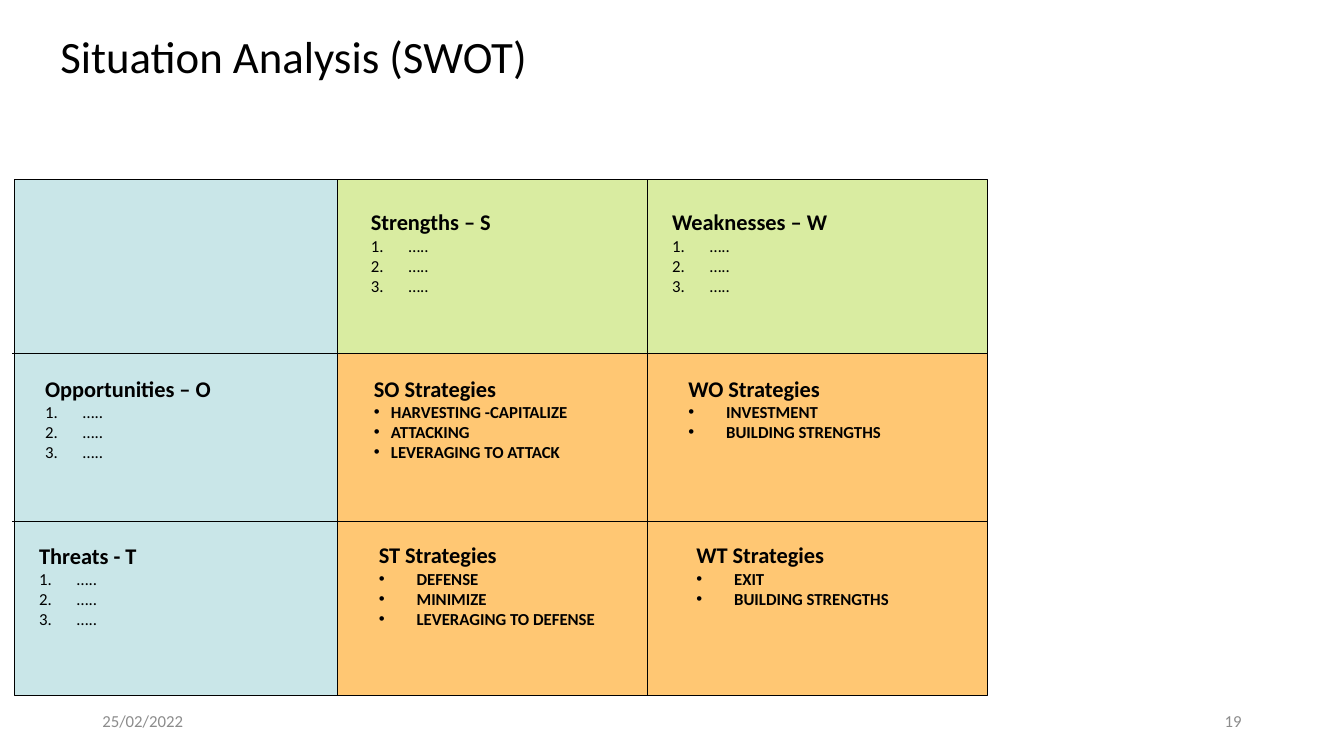
import lxml.etree
import pptx
import pptx.dml.color
import pptx.enum.shapes
import pptx.enum.text
import pptx.oxml.ns
import pptx.util

Pt = pptx.util.Pt
qn = pptx.oxml.ns.qn
ALIGN = pptx.enum.text.PP_ALIGN
ANCHOR = pptx.enum.text.MSO_ANCHOR

BLACK = "000000"
FACTORS_BLUE = "BBE0E3"
FACTORS_GREEN = "99CC00"
STRATEGY_ORANGE = "FF9900"
FOOTER_GREY = "8C8C8C"

LEFT, INTERNAL, WEAKNESS, RIGHT = 8.7, 241.2, 462.2, 705.6
TOP, OPPORTUNITY, THREAT, BOTTOM = 128.2, 252.7, 372.2, 496.8
FRAME_LEFT = 10.2

PLACEHOLDERS = ["…..", "…..", "….."]


def rgb(color):
    return pptx.dml.color.RGBColor.from_string(color)


def add_child(parent, tag, **attributes):
    return lxml.etree.SubElement(parent, qn(tag), attributes)


def format_text(paragraph, text, size=12, color=BLACK, bold=False,
                align=ALIGN.LEFT, spacing=None):
    paragraph.alignment = align
    if spacing:
        paragraph.line_spacing = spacing
    run = paragraph.add_run()
    run.text = text
    run.font.name = "Calibri"
    run.font.size = Pt(size)
    run.font.bold = bold
    run.font.color.rgb = rgb(color)


def add_frame(slide, left, top, width, height, anchor=ANCHOR.TOP):
    frame = slide.shapes.add_textbox(Pt(left), Pt(top), Pt(width), Pt(height)).text_frame
    frame.word_wrap = True
    frame.vertical_anchor = anchor
    return frame


def add_label(slide, text, left, top, width, height, anchor=ANCHOR.TOP, **style):
    frame = add_frame(slide, left, top, width, height, anchor)
    format_text(frame.paragraphs[0], text, **style)


def add_rectangle(slide, left, top, right, bottom, fill=None, opacity=100, line=None):
    rectangle = slide.shapes.add_shape(
        pptx.enum.shapes.MSO_SHAPE.RECTANGLE,
        Pt(left), Pt(top), Pt(right - left), Pt(bottom - top))
    rectangle.shadow.inherit = False
    if fill:
        rectangle.fill.solid()
        rectangle.fill.fore_color.rgb = rgb(fill)
        tint = rectangle.fill._xPr.find(qn("a:solidFill"))[0]
        add_child(tint, "a:alpha", val=str(opacity * 1000))
    else:
        rectangle.fill.background()
    if line:
        rectangle.line.color.rgb = rgb(line)
        rectangle.line.width = Pt(0.75)
    else:
        rectangle.line.fill.background()


def add_divider(slide, x1, y1, x2, y2):
    divider = slide.shapes.add_connector(
        pptx.enum.shapes.MSO_CONNECTOR.STRAIGHT, Pt(x1), Pt(y1), Pt(x2), Pt(y2))
    divider.line.color.rgb = rgb(BLACK)
    divider.line.width = Pt(0.75)
    add_child(divider._element.spPr, "a:effectLst")


def indent(paragraph, margin, hanging):
    properties = paragraph._p.get_or_add_pPr()
    properties.set("marL", str(Pt(margin)))
    properties.set("indent", str(-Pt(hanging)))
    return properties


def add_quadrant(slide, heading, items, left, top, width,
                 numbered=False, margin=27, hanging=27):
    frame = add_frame(slide, left, top, width, 70)
    format_text(frame.paragraphs[0], heading, size=16, bold=True)
    indent(frame.paragraphs[0], margin, hanging)
    for item in items:
        paragraph = frame.add_paragraph()
        format_text(paragraph, item, bold=not numbered)
        properties = indent(paragraph, margin, hanging)
        if numbered:
            add_child(properties, "a:buAutoNum", type="arabicPeriod")
        else:
            add_child(properties, "a:buFont", typeface="Arial")
            add_child(properties, "a:buChar", char="•")


def main():
    deck = pptx.Presentation()
    deck.slide_width, deck.slide_height = Pt(960), Pt(540)
    slide = deck.slides.add_slide(deck.slide_layouts[6])

    add_label(slide, "25/02/2022", 66, 500.5, 216, 28.8, ANCHOR.MIDDLE, color=FOOTER_GREY)
    add_label(slide, "19", 678, 500.5, 216, 28.8, ANCHOR.MIDDLE,
              color=FOOTER_GREY, align=ALIGN.RIGHT)

    add_rectangle(slide, FRAME_LEFT, TOP, INTERNAL, BOTTOM, FACTORS_BLUE, 79)
    add_rectangle(slide, INTERNAL, OPPORTUNITY, RIGHT, BOTTOM, STRATEGY_ORANGE, 55)
    add_rectangle(slide, INTERNAL, TOP, RIGHT, OPPORTUNITY, FACTORS_GREEN, 37)

    add_label(slide, "Situation Analysis (SWOT)", 36, 21.6, 477.4, 90, size=32, spacing=0.9)

    for column in (INTERNAL, WEAKNESS):
        add_divider(slide, column, TOP, column, BOTTOM)
    for row in (OPPORTUNITY, THREAT):
        add_divider(slide, LEFT, row, RIGHT, row)
    add_rectangle(slide, FRAME_LEFT, TOP, RIGHT, BOTTOM, line=BLACK)

    for heading, left, top in (
            ("Strengths – S", 257.8, 145.4),
            ("Weaknesses – W", 473, 145.4),
            ("Opportunities – O", 25.2, 264.2),
            ("Threats - T", 20.9, 383.5)):
        add_quadrant(slide, heading, PLACEHOLDERS, left, top, 150, numbered=True)

    add_quadrant(slide, "SO Strategies",
                 ["HARVESTING -CAPITALIZE", "ATTACKING", "LEVERAGING TO ATTACK"],
                 257.8, 264.2, 186, margin=14.4, hanging=12.2)
    for heading, items, left, top in (
            ("WO Strategies", ["INVESTMENT", "BUILDING STRENGTHS"], 484.6, 264.2),
            ("ST Strategies", ["DEFENSE", "MINIMIZE", "LEVERAGING TO DEFENSE"], 263.5, 383.3),
            ("WT Strategies", ["EXIT", "BUILDING STRENGTHS"], 490.3, 383.3)):
        add_quadrant(slide, heading, items, left, top, 200)

    deck.save("out.pptx")


if __name__ == "__main__":
    main()
